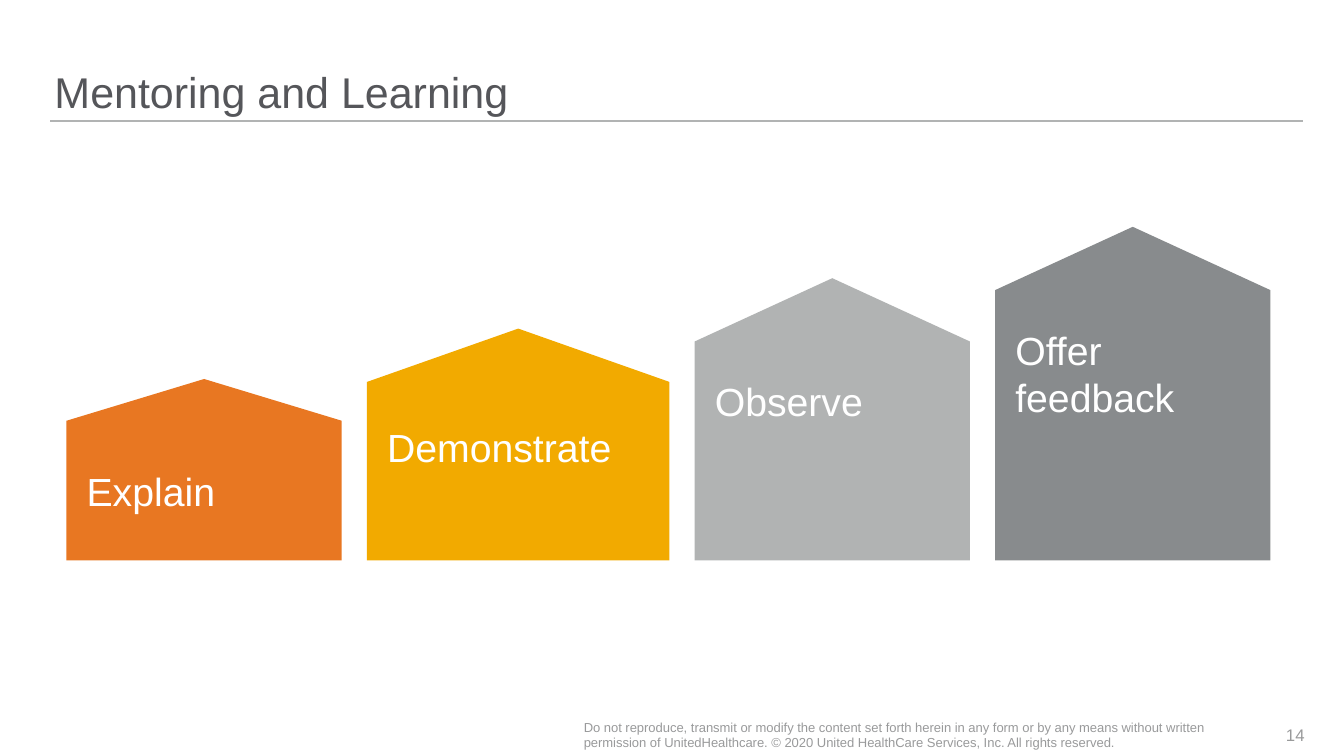
from pptx import Presentation
from pptx.dml.color import RGBColor
from pptx.enum.shapes import MSO_CONNECTOR, MSO_SHAPE
from pptx.enum.text import MSO_ANCHOR, MSO_AUTO_SIZE, PP_ALIGN
from pptx.oxml.ns import qn
from pptx.util import Inches, Pt

TITLE = "Mentoring and Learning"
STEPS = [  # label, width, height, colour
    ("Explain", 2.73, 1.8, "E87722"),
    ("Demonstrate", 3, 2.3, "F2AA00"),
    ("Observe", 2.73, 2.8, "B1B3B3"),
    ("Offer feedback", 2.73, 3.31, "888B8D"),
]
NOTICE = ("Do not reproduce, transmit or modify the content set forth herein in any form "
          "or by any means without written permission of UnitedHealthcare. "
          "© 2020 United HealthCare Services, Inc. All rights reserved.")
PAGE = "14"

STEPS_LEFT, STEPS_BOTTOM, STEP_GAP = 0.66, 5.56, 0.25
STEP_INSETS = (0, 0.2, 0.67, 0.2)


def rgb(value):
    return RGBColor.from_string(value)


def write(shape, text, size, color, anchor=MSO_ANCHOR.TOP, insets=(0, 0, 0, 0),
          align=PP_ALIGN.LEFT):
    tf = shape.text_frame
    left, top, right, bottom = (Inches(v) for v in insets)
    frame = {"word_wrap": True, "auto_size": MSO_AUTO_SIZE.NONE, "vertical_anchor": anchor,
             "margin_left": left, "margin_top": top,
             "margin_right": right, "margin_bottom": bottom}
    for name, value in frame.items():
        setattr(tf, name, value)
    p = tf.paragraphs[0]
    p.alignment = align
    r = p.add_run()
    r.text = text
    for name, value in {"name": "Arial", "size": Pt(size), "bold": False}.items():
        setattr(r.font, name, value)
    r.font.color.rgb = rgb(color)
    return p


def add_step(s, left, label, width, height, color):
    """Draw an upward pentagon: a home plate turned left, with its text turned back."""
    x = left + (width - height) / 2
    y = STEPS_BOTTOM - (height + width) / 2
    sp = s.shapes.add_shape(MSO_SHAPE.PENTAGON, Inches(x), Inches(y),
                            Inches(height), Inches(width))
    sp.rotation = 270
    sp.adjustments[0] = 0.23
    sp.shadow.inherit = False
    sp.fill.solid()
    sp.fill.fore_color.rgb = rgb(color)
    sp.line.fill.background()
    p = write(sp, label, 28, "FFFFFF", insets=STEP_INSETS)
    p.space_after = Pt(8)
    sp.text_frame._txBody.bodyPr.set("vert", "vert")


def add_footer(s, left, width, text, size, align):
    box = s.shapes.add_textbox(Inches(left), Inches(7.09), Inches(width), Inches(0.4))
    write(box, text, size, "999A9B", MSO_ANCHOR.MIDDLE, align=align)


def main():
    prs = Presentation()
    prs.slide_width, prs.slide_height = Inches(13.33), Inches(7.5)
    s = prs.slides.add_slide(prs.slide_layouts[5])

    rule = s.shapes.add_connector(MSO_CONNECTOR.STRAIGHT, Inches(0.5), Inches(1.2),
                                  Inches(12.92), Inches(1.2))
    rule.line.color.rgb = rgb("B1B3B3")
    rule.line.width = Pt(1)
    sppr = rule._element.spPr
    sppr.append(sppr.makeelement(qn("a:effectLst"), {}))

    title = s.shapes.title
    title.left, title.top = Inches(0.54), Inches(0)
    title.width, title.height = Inches(12.38), Inches(1.17)
    write(title, TITLE, 30.7, "55565A", MSO_ANCHOR.BOTTOM).line_spacing = 0.9

    left = STEPS_LEFT
    for label, width, height, color in STEPS:
        add_step(s, left, label, width, height, color)
        left += width + STEP_GAP

    add_footer(s, 5.79, 6.48, NOTICE, 9.3, PP_ALIGN.LEFT)
    add_footer(s, 12.27, 0.67, PAGE, 12, PP_ALIGN.RIGHT)
    prs.save("out.pptx")


if __name__ == "__main__":
    main()
